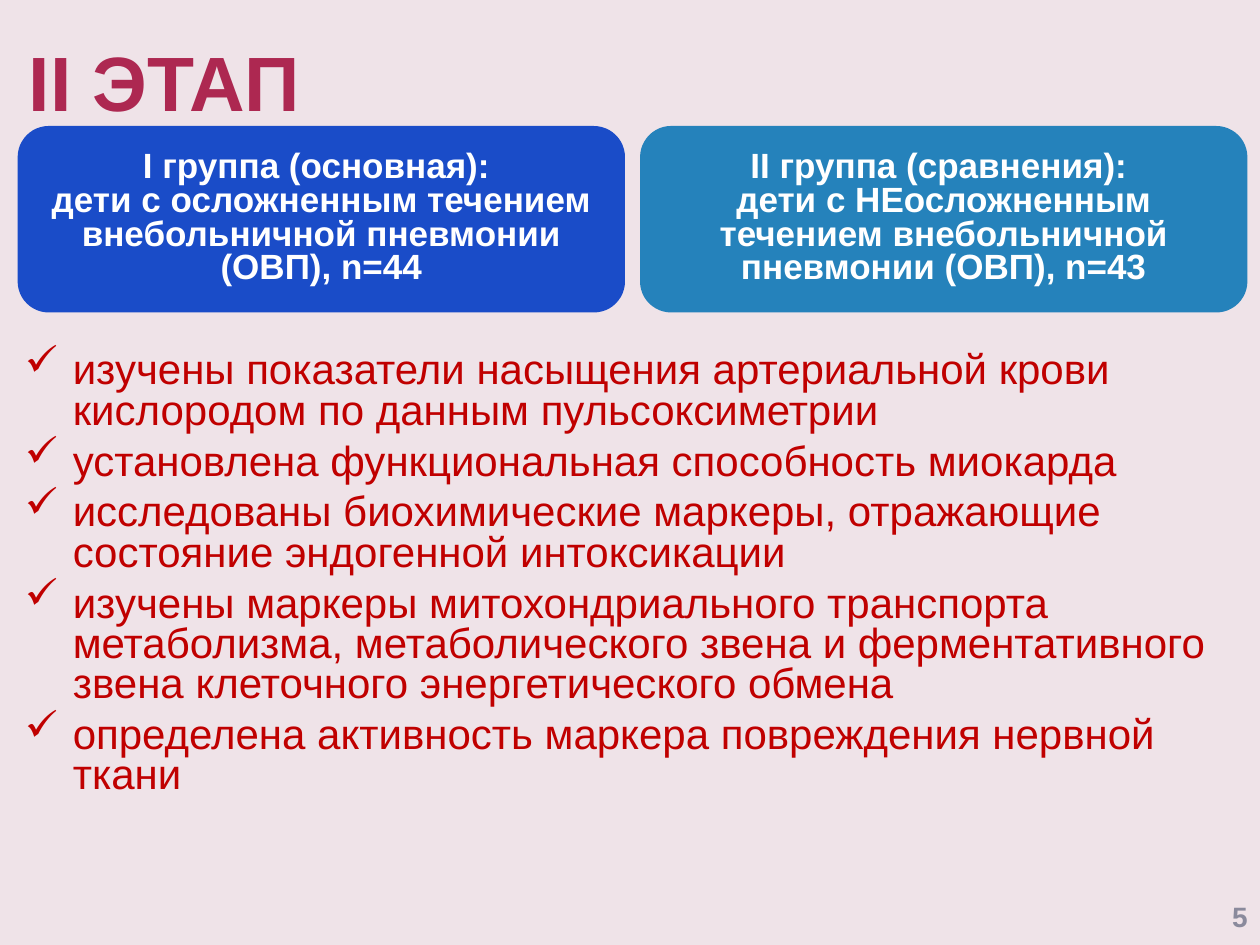
from lxml import etree
from pptx import Presentation
from pptx.dml.color import RGBColor
from pptx.enum.shapes import MSO_SHAPE
from pptx.enum.text import MSO_ANCHOR, PP_ALIGN
from pptx.oxml.ns import qn
from pptx.util import Inches, Pt

ROUNDED = MSO_SHAPE.ROUNDED_RECTANGLE
TOP, MIDDLE = MSO_ANCHOR.TOP, MSO_ANCHOR.MIDDLE
LEFT, CENTER, RIGHT = PP_ALIGN.LEFT, PP_ALIGN.CENTER, PP_ALIGN.RIGHT

BACKGROUND = RGBColor(0xEF, 0xE3, 0xE8)
CRIMSON = RGBColor(0xAD, 0x28, 0x51)
RED = RGBColor(0xC0, 0x00, 0x00)
BLUE = RGBColor(0x1A, 0x4C, 0xC8)
TEAL = RGBColor(0x25, 0x82, 0xBB)
WHITE = RGBColor(0xFF, 0xFF, 0xFF)
GREY = RGBColor(0x8A, 0x8A, 0x9C)

FONT = "Arial"
BULLET_INDENT = Inches(0.38)

# Card grid: two equal columns
CARD_LEFT, CARD_TOP = 0.14, 1
CARD_WIDTH, CARD_HEIGHT, CARD_GAP = 4.82, 1.48, 0.12

# \v is a line break inside a paragraph
GROUPS = [
    ("I группа (основная): \vдети с осложненным течением "
     "внебольничной пневмонии (ОВП), n=44", BLUE),
    ("II группа (сравнения): \vдети с НЕосложненным течением "
     "внебольничной пневмонии (ОВП), n=43", TEAL),
]
FINDINGS = [
    "изучены показатели насыщения артериальной крови кислородом по данным пульсоксиметрии",
    "установлена функциональная способность миокарда",
    "исследованы биохимические маркеры, отражающие состояние эндогенной интоксикации",
    "изучены маркеры митохондриального транспорта метаболизма, метаболического звена "
    "и ферментативного звена клеточного энергетического обмена",
    "определена активность маркера повреждения нервной ткани",
]


def write_text(frame, text, size, color, bold=True, align=LEFT, anchor=MIDDLE, after=6):
    frame.word_wrap = True
    frame.vertical_anchor = anchor
    frame.text = text
    for para in frame.paragraphs:
        para.alignment = align
        para.line_spacing = 0.8
        para.space_after = Pt(after)
        for span in para.runs:
            span.font.name = FONT
            span.font.size = Pt(size)
            span.font.bold = bold
            span.font.color.rgb = color


def add_text(page, area, text, size, color, **style):
    box = page.shapes.add_textbox(*map(Inches, area))
    write_text(box.text_frame, text, size, color, **style)
    return box


def add_checkmarks(box):
    for para in box.text_frame.paragraphs:
        properties = para._p.get_or_add_pPr()
        properties.set("marL", str(BULLET_INDENT))
        properties.set("indent", str(-BULLET_INDENT))
        etree.SubElement(properties, qn("a:buChar")).set("char", "✓")


def add_group_card(page, column, text, color):
    left = CARD_LEFT + column * (CARD_WIDTH + CARD_GAP)
    area = (left, CARD_TOP, CARD_WIDTH, CARD_HEIGHT)
    card = page.shapes.add_shape(ROUNDED, *map(Inches, area))
    card.shadow.inherit = False
    card.fill.solid()
    card.fill.fore_color.rgb = color
    card.line.fill.background()
    frame = card.text_frame
    frame.margin_left = frame.margin_right = Inches(0.02)
    frame.margin_top = frame.margin_bottom = Inches(0.01)
    write_text(frame, text, 20, WHITE, align=CENTER, after=0)


def main():
    deck = Presentation()
    deck.slide_width, deck.slide_height = Inches(10), Inches(7.5)
    page = deck.slides.add_slide(deck.slide_layouts[6])
    page.background.fill.solid()
    page.background.fill.fore_color.rgb = BACKGROUND

    # Heading
    add_text(page, (0.13, 0.21, 9.75, 1), "II ЭТАП", 44, CRIMSON)

    # Checklist of findings
    checklist = add_text(page, (0.1, 2.75, 9.74, 4), "\n".join(FINDINGS),
                         24, RED, bold=False, anchor=TOP)
    add_checkmarks(checklist)

    # Patient groups
    for column, (text, color) in enumerate(GROUPS):
        add_group_card(page, column, text, color)

    # Page number
    add_text(page, (7.75, 7.1, 2.25, 0.4), "5", 16, GREY, align=RIGHT)

    deck.save("out.pptx")


if __name__ == "__main__":
    main()
